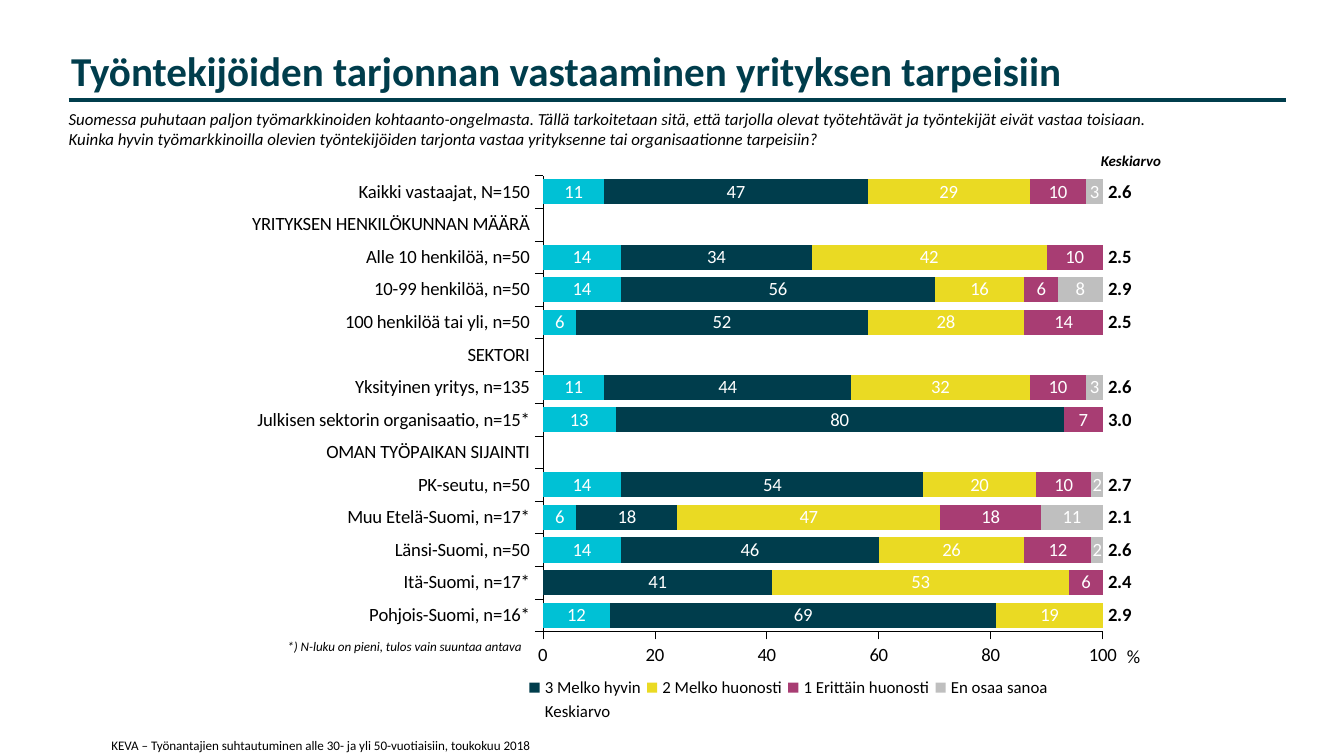
from dataclasses import dataclass

from lxml.etree import SubElement
from pptx import Presentation
from pptx.chart.data import CategoryChartData
from pptx.dml.color import RGBColor
from pptx.enum.chart import (XL_CHART_TYPE, XL_LABEL_POSITION, XL_LEGEND_POSITION,
                             XL_TICK_MARK)
from pptx.enum.shapes import MSO_CONNECTOR
from pptx.enum.text import MSO_ANCHOR, MSO_AUTO_SIZE, PP_ALIGN
from pptx.oxml import parse_xml
from pptx.oxml.ns import nsdecls, qn
from pptx.util import Pt

EMU_PER_PX = 4572


@dataclass(frozen=True)
class Theme:
    font: str = "Calibri"
    ink: str = "000000"
    petrol: str = "003D4C"
    turquoise: str = "00C1D5"
    yellow: str = "EADA23"
    plum: str = "A83D73"
    grey: str = "BFBFBF"
    white: str = "FFFFFF"
    title: int = 22
    chart: int = 10
    body: int = 9
    heading: int = 8
    note: int = 7


THEME = Theme()

CATEGORIES = [
    "Kaikki vastaajat, N=150", "YRITYKSEN HENKILÖKUNNAN MÄÄRÄ",
    "Alle 10 henkilöä, n=50", "10-99 henkilöä, n=50", "100 henkilöä tai yli, n=50",
    "SEKTORI", "Yksityinen yritys, n=135", "Julkisen sektorin organisaatio, n=15*",
    "OMAN TYÖPAIKAN SIJAINTI", "PK-seutu, n=50", "Muu Etelä-Suomi, n=17*",
    "Länsi-Suomi, n=50", "Itä-Suomi, n=17*", "Pohjois-Suomi, n=16*",
]
ANSWERS = [
    ("4 Erittäin hyvin", THEME.turquoise,
     [11, None, 14, 14, 6, None, 11, 13, None, 14, 6, 14, None, 12]),
    ("3 Melko hyvin", THEME.petrol,
     [47, None, 34, 56, 52, None, 44, 80, None, 54, 18, 46, 41, 69]),
    ("2 Melko huonosti", THEME.yellow,
     [29, None, 42, 16, 28, None, 32, None, None, 20, 47, 26, 53, 19]),
    ("1 Erittäin huonosti", THEME.plum,
     [10, None, 10, 6, 14, None, 10, 7, None, 10, 18, 12, 6, None]),
    ("En osaa sanoa", THEME.grey,
     [3, None, None, 8, None, None, 3, None, None, 2, 11, 2, None, None]),
    ("Keskiarvo", None,
     [2.6, None, 2.5, 2.9, 2.5, None, 2.6, 3, None, 2.7, 2.1, 2.6, 2.4, 2.9]),
]


def px(*lengths):
    return [length * EMU_PER_PX for length in lengths]


def rgb(color):
    return RGBColor.from_string(color)


def style_font(font, size, color=THEME.ink, bold=False, italic=False):
    font.name = THEME.font
    font.size = Pt(size)
    font.color.rgb = rgb(color)
    font.bold = bold
    font.italic = italic


def add_text(slide, box, lines, size, color=THEME.ink, bold=False, italic=False,
             align=PP_ALIGN.LEFT, wrap=True, grow=True, insets=(20, 10),
             anchor=MSO_ANCHOR.TOP):
    frame = slide.shapes.add_textbox(*px(*box)).text_frame
    frame.word_wrap = wrap
    frame.auto_size = MSO_AUTO_SIZE.SHAPE_TO_FIT_TEXT if grow else MSO_AUTO_SIZE.NONE
    frame.vertical_anchor = anchor
    side, edge = px(*insets)
    frame.margin_left = frame.margin_right = side
    frame.margin_top = frame.margin_bottom = edge
    for index, line in enumerate(lines):
        paragraph = frame.add_paragraph() if index else frame.paragraphs[0]
        paragraph.alignment = align
        run = paragraph.add_run()
        run.text = line
        style_font(run.font, size, color, bold, italic)


def add_rule(slide, left, right, top):
    rule = slide.shapes.add_connector(MSO_CONNECTOR.STRAIGHT, *px(left, top, right, top))
    rule.line.color.rgb = rgb(THEME.petrol)
    rule.line.width = Pt(2.25)
    SubElement(rule._element.spPr, qn("a:effectLst"))


def manual_layout(*percentages, inner=False):
    x, y, width, height = (percentage / 100 for percentage in percentages)
    target = '<c:layoutTarget val="inner"/>' if inner else ""
    return parse_xml(
        f'<c:layout {nsdecls("c")}><c:manualLayout>{target}'
        f'<c:xMode val="edge"/><c:yMode val="edge"/><c:x val="{x}"/><c:y val="{y}"/>'
        f'<c:w val="{width}"/><c:h val="{height}"/></c:manualLayout></c:layout>')


def drop_layout(element):
    for layout in element.findall(qn("c:layout")):
        element.remove(layout)


def style_axis(axis):
    axis.has_major_gridlines = False
    axis.major_tick_mark = XL_TICK_MARK.OUTSIDE
    axis.minor_tick_mark = XL_TICK_MARK.NONE
    axis.format.line.color.rgb = rgb(THEME.ink)
    axis.format.line.width = Pt(0.25)
    style_font(axis.tick_labels.font, THEME.chart)


def style_answer(series, color):
    labels = series.data_labels
    labels.show_value = True
    if color:
        series.format.fill.solid()
        series.format.fill.fore_color.rgb = rgb(color)
        style_font(labels.font, THEME.chart, THEME.white)
    else:
        series.format.fill.background()
        style_font(labels.font, THEME.chart, bold=True)
        labels.number_format = "#,##0.0"
        labels.number_format_is_linked = False
        labels.position = XL_LABEL_POSITION.INSIDE_BASE
    series.format.line.fill.background()


def style_legend(chart):
    chart.has_legend = True
    legend = chart.legend
    legend.position = XL_LEGEND_POSITION.BOTTOM
    legend.include_in_layout = False
    style_font(legend.font, THEME.body)
    element = legend._element
    drop_layout(element)
    hidden = parse_xml(f'<c:legendEntry {nsdecls("c")}><c:idx val="{len(ANSWERS) - 1}"/>'
                       '<c:delete val="1"/></c:legendEntry>')
    element.find(qn("c:legendPos")).addnext(hidden)
    hidden.addnext(manual_layout(39.8, 88, 40.4, 8.5))


def add_answer_chart(slide, box):
    data = CategoryChartData()
    data.categories = CATEGORIES
    for name, _, values in ANSWERS:
        data.add_series(name, values)
    chart = slide.shapes.add_chart(XL_CHART_TYPE.BAR_STACKED, *px(*box), data).chart
    chart.has_title = False
    style_font(chart.font, THEME.chart)
    plot = chart.plots[0]
    plot.gap_width = 30
    plot.overlap = 100
    plot.vary_by_categories = False
    for series, (_, color, _) in zip(plot.series, ANSWERS):
        style_answer(series, color)
    style_axis(chart.category_axis)
    style_axis(chart.value_axis)
    chart.category_axis.reverse_order = True
    chart.value_axis._element.find(qn("c:crosses")).set("val", "max")
    chart.value_axis.minimum_scale = 0
    chart.value_axis.maximum_scale = 100
    chart.value_axis.major_unit = 20
    style_legend(chart)
    plot_area = chart._chartSpace.chart.plotArea
    drop_layout(plot_area)
    plot_area.insert(0, manual_layout(41.3, 10.8, 42.6, 70.8, inner=True))


def main():
    presentation = Presentation()
    presentation.slide_width, presentation.slide_height = px(2000, 1125)
    slide = presentation.slides.add_slide(presentation.slide_layouts[6])
    add_answer_chart(slide, (0, 158, 1956, 958))
    add_text(slide, (1662, 952, 52, 50), ["%"], THEME.chart, insets=(15, 8))
    add_rule(slide, 102, 1914, 149)
    add_text(slide, (86, 58, 1530, 94),
             ["Työntekijöiden tarjonnan vastaaminen yrityksen tarpeisiin"],
             THEME.title, THEME.petrol, bold=True, wrap=False)
    add_text(slide, (87, 154, 1664, 76), [
        "Suomessa puhutaan paljon työmarkkinoiden kohtaanto-ongelmasta. Tällä tarkoitetaan "
        "sitä, että tarjolla olevat työtehtävät ja työntekijät eivät vastaa toisiaan.",
        "Kuinka hyvin työmarkkinoilla olevien työntekijöiden tarjonta vastaa yrityksenne "
        "tai organisaationne tarpeisiin?",
    ], THEME.body, italic=True, wrap=False, insets=(15, 8))
    add_text(slide, (146, 1070, 744, 60),
             ["KEVA – Työnantajien suhtautuminen alle 30- ja yli 50-vuotiaisiin, toukokuu 2018"],
             THEME.note, grow=False, anchor=MSO_ANCHOR.BOTTOM)
    add_text(slide, (1617, 216, 132, 48), ["Keskiarvo"], THEME.heading, bold=True,
             italic=True, align=PP_ALIGN.CENTER, wrap=False)
    add_text(slide, (386, 940, 410, 44), ["*) N-luku on pieni, tulos vain suuntaa antava"],
             THEME.note, italic=True, align=PP_ALIGN.RIGHT)
    presentation.save("out.pptx")


if __name__ == "__main__":
    main()
